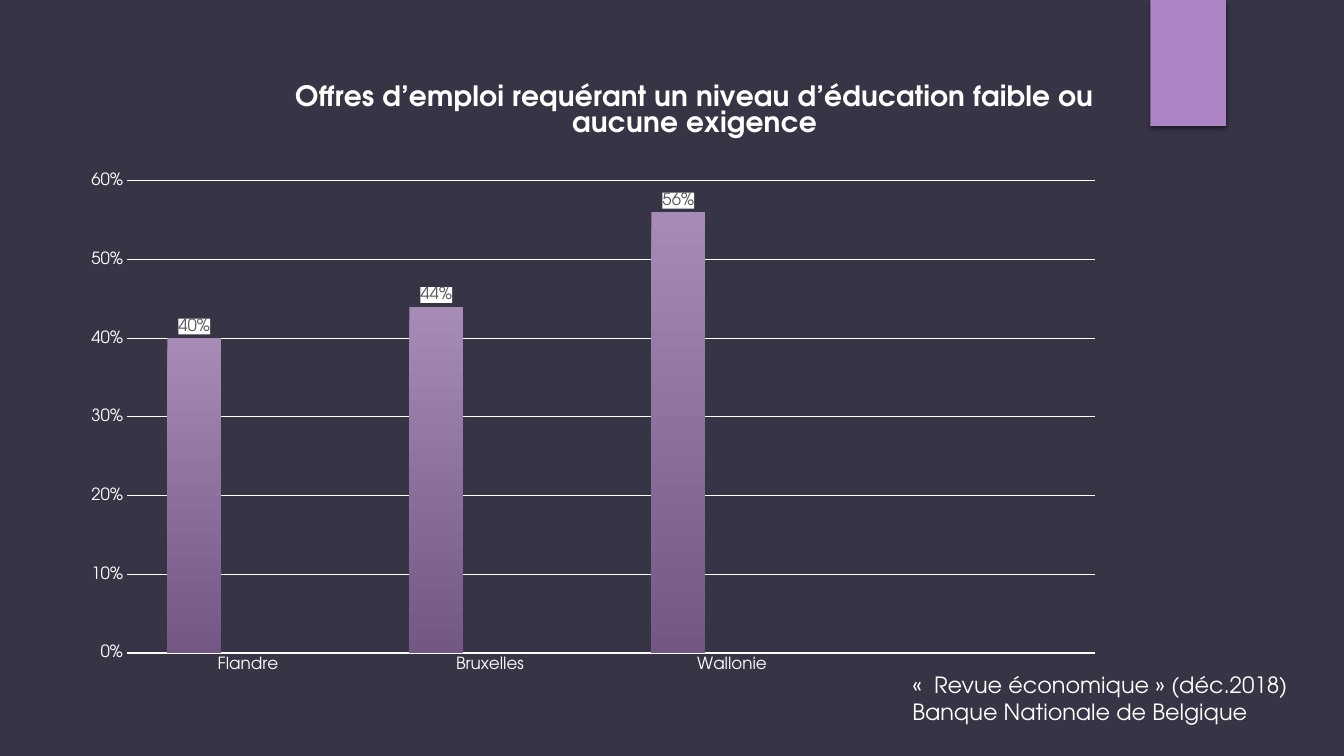
import pptx
import pptx.chart.data
import pptx.dml.color
import pptx.enum.chart
import pptx.enum.shapes
import pptx.enum.text
import pptx.oxml
import pptx.oxml.ns
import pptx.util
from dataclasses import dataclass

Inches = pptx.util.Inches
Pt = pptx.util.Pt
RGB = pptx.dml.color.RGBColor.from_string
NAMESPACES = pptx.oxml.ns.nsdecls("a", "c")


@dataclass(frozen=True)
class Theme:
    """Colours, font and type sizes of the deck."""
    font: str = "TeX Gyre Adventor"
    backdrop: str = "373545"
    accent: str = "AD84C6"
    text: str = "FFFFFF"
    label: str = "595959"
    gradients: tuple = (("A68BB6", "735785"), ("C5A8D6", "8E5DAC"), ("EBE3F1", "A88CBB"))
    title_size: int = 20
    source_size: int = 16
    axis_size: int = 12
    chart_size: int = 10


def apply(target, values):
    """Set every attribute named in values on target."""
    for name, value in values.items():
        setattr(target, name, value)


def layout_xml(inner, **place):
    """Return a manual chart layout element."""
    target = '<c:layoutTarget val="inner"/>' if inner else ""
    modes = "".join(f'<c:{axis}Mode val="edge"/>' for axis in "xy")
    sides = "".join(f'<c:{side} val="{value}"/>' for side, value in place.items())
    return pptx.oxml.parse_xml(
        f"<c:layout {NAMESPACES}><c:manualLayout>{target}{modes}{sides}"
        "</c:manualLayout></c:layout>")


class Painter:
    """Draws styled elements on the current slide."""

    def __init__(self, deck, theme):
        self.theme = theme
        self.page = deck.slides.add_slide(deck.slide_layouts[6])

    def style_font(self, font, size, color=None, bold=False):
        """Give a font the theme face with a size and colour."""
        apply(font, {"name": self.theme.font, "size": Pt(size), "bold": bold})
        font.color.rgb = RGB(color or self.theme.text)

    def rectangle(self, place, color, shadow=False):
        """Add a plain rectangle, with a soft shadow if asked."""
        box = self.page.shapes.add_shape(
            pptx.enum.shapes.MSO_SHAPE.RECTANGLE, *map(Inches, place))
        box.shadow.inherit = False
        box.fill.solid()
        box.fill.fore_color.rgb = RGB(color)
        box.line.fill.background()
        if shadow:
            effects = box._element.spPr.find(pptx.oxml.ns.qn("a:effectLst"))
            effects.append(pptx.oxml.parse_xml(
                f'<a:outerShdw {NAMESPACES} blurRad="{Pt(3)}" dist="{Pt(2)}" dir="5400000">'
                '<a:srgbClr val="000000"><a:alpha val="45000"/></a:srgbClr></a:outerShdw>'))

    def text(self, place, lines, size):
        """Add a wrapped text box with one paragraph per line."""
        frame = self.page.shapes.add_textbox(*map(Inches, place)).text_frame
        apply(frame, {"word_wrap": True, "text": "\n".join(lines)})
        for para in frame.paragraphs:
            for span in para.runs:
                self.style_font(span.font, size)

    def column_chart(self, place, title, categories, series):
        """Add a percentage column chart with gradient columns."""
        data = pptx.chart.data.CategoryChartData(number_format="0%")
        data.categories = categories
        for name, values in series.items():
            data.add_series(name, values)
        chart = self.page.shapes.add_chart(
            pptx.enum.chart.XL_CHART_TYPE.COLUMN_CLUSTERED,
            *map(Inches, place), data).chart
        chart.has_legend = False
        self.style_font(chart.font, self.theme.chart_size)
        self.chart_title(chart, title)
        self.chart_axes(chart)
        plot = chart.plots[0]
        apply(plot, {"gap_width": 150, "overlap": 0, "vary_by_categories": False})
        for column, colors in zip(plot.series, self.theme.gradients):
            self.column_series(column, colors)
        area = chart._chartSpace.chart.plotArea
        for layout in area.findall(pptx.oxml.ns.qn("c:layout")):
            area.remove(layout)
        area.insert(0, layout_xml(True, x=0.054, y=0.18, w=0.926, h=0.769))

    def chart_title(self, chart, title):
        """Set the bold chart title at its own place."""
        frame = chart.chart_title.text_frame
        frame.text = title
        para = frame.paragraphs[0]
        apply(para, {"alignment": pptx.enum.text.PP_ALIGN.CENTER, "line_spacing": 0.9})
        self.style_font(para.runs[0].font, self.theme.title_size, bold=True)
        element = chart.chart_title._element
        for layout in element.findall(pptx.oxml.ns.qn("c:layout")):
            element.remove(layout)
        element.find(pptx.oxml.ns.qn("c:tx")).addnext(layout_xml(False, x=0.21, y=0.01))

    def chart_axes(self, chart):
        """Style both axes and the gridlines."""
        no_tick = pptx.enum.chart.XL_TICK_MARK.NONE
        for axis in (chart.category_axis, chart.value_axis):
            apply(axis, {"major_tick_mark": no_tick, "minor_tick_mark": no_tick})
            self.style_font(axis.tick_labels.font, self.theme.axis_size)
        value_axis = chart.value_axis
        apply(value_axis, {"minimum_scale": 0, "maximum_scale": 0.6, "major_unit": 0.1,
                           "has_major_gridlines": True})
        apply(value_axis.tick_labels, {"number_format": "0%", "number_format_is_linked": False})
        value_axis.format.line.fill.background()
        for line, width in ((chart.category_axis.format.line, 1),
                            (value_axis.major_gridlines.format.line, 0.75)):
            line.color.rgb = RGB(self.theme.text)
            line.width = Pt(width)

    def column_series(self, column, colors):
        """Give a series its gradient and white-backed labels."""
        fill = column.format.fill
        fill.gradient()
        fill.gradient_angle = 270
        for stop, color, position in zip(fill.gradient_stops, colors, (0, 1)):
            stop.color.rgb = RGB(color)
            stop.position = position
        labels = column.data_labels
        apply(labels, {"show_value": True, "number_format": "0%",
                       "number_format_is_linked": False,
                       "position": pptx.enum.chart.XL_LABEL_POSITION.OUTSIDE_END})
        self.style_font(labels.font, self.theme.axis_size, self.theme.label)
        labels._element.find(pptx.oxml.ns.qn("c:txPr")).addprevious(pptx.oxml.parse_xml(
            f'<c:spPr {NAMESPACES}><a:solidFill><a:srgbClr val="{self.theme.text}"/>'
            "</a:solidFill><a:ln><a:noFill/></a:ln></c:spPr>"))


def main():
    """Build and save the slide."""
    deck = pptx.Presentation()
    apply(deck, {"slide_width": Inches(13.33), "slide_height": Inches(7.5)})
    theme = Theme()
    painter = Painter(deck, theme)
    painter.rectangle((0, 0, 13.33, 7.5), theme.backdrop)
    painter.rectangle((11.41, 0, 0.75, 1.25), theme.accent, shadow=True)
    painter.column_chart(
        (0.7, 0.7, 10.37, 6.09),
        "Offres d’emploi requérant un niveau d’éducation faible ou aucune exigence",
        ("Flandre", "Bruxelles", "Wallonie", ""),
        {"Series 1": (0.4, 0.44, 0.56, None),
         "Series 2": (None,) * 4,
         "Series 3": (None,) * 4})
    painter.text((8.95, 6.61, 4.38, 0.64),
                 ("«  Revue économique » (déc.2018)", "Banque Nationale de Belgique"),
                 theme.source_size)
    deck.save("out.pptx")


if __name__ == "__main__":
    main()
